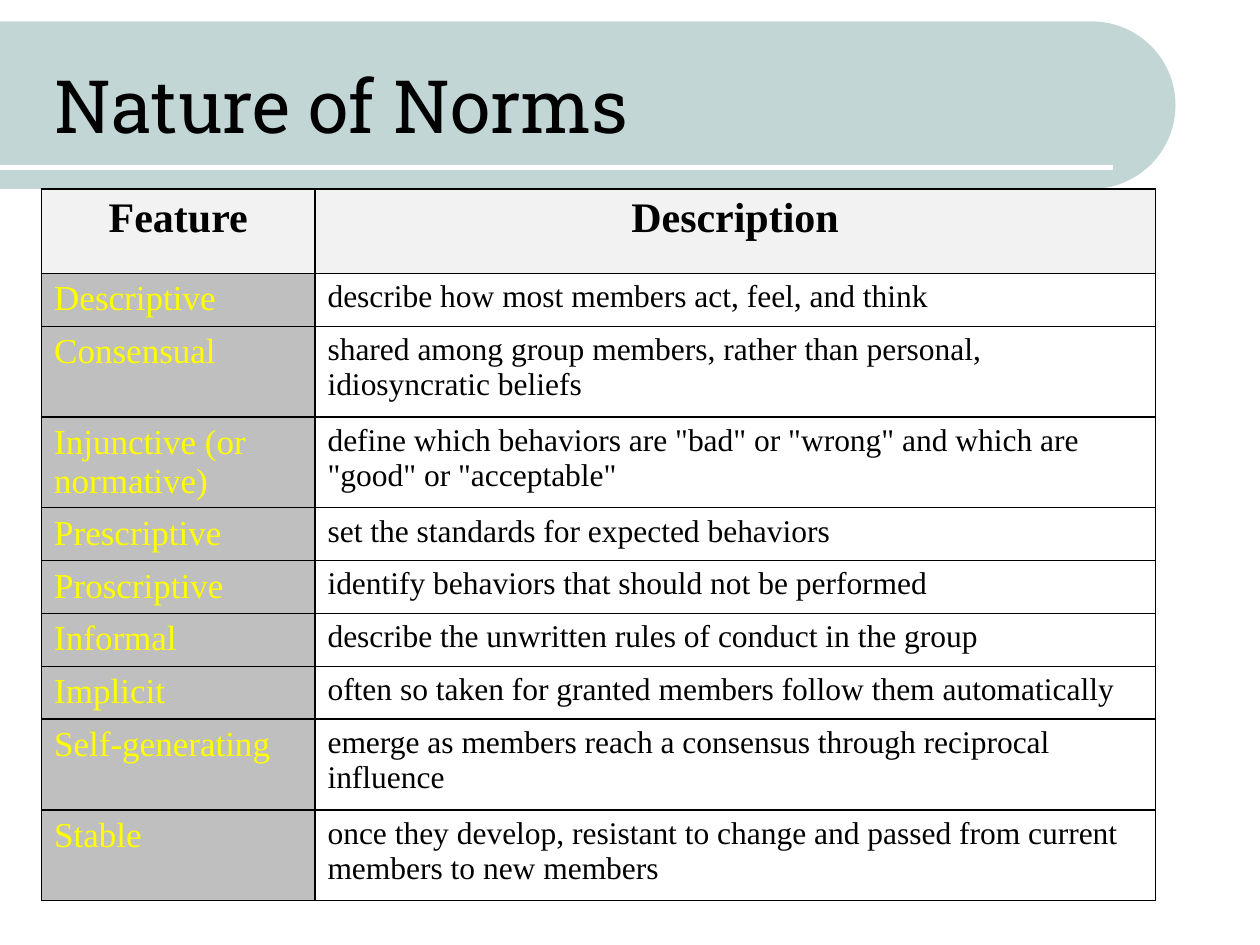
from math import cos, pi, sin

from lxml.etree import SubElement
from pptx import Presentation
from pptx.dml.color import RGBColor
from pptx.enum.shapes import MSO_CONNECTOR
from pptx.enum.text import MSO_ANCHOR, MSO_AUTO_SIZE, PP_ALIGN
from pptx.oxml.ns import qn
from pptx.util import Inches, Pt

BLACK = RGBColor(0x00, 0x00, 0x00)
WHITE = RGBColor(0xFF, 0xFF, 0xFF)
YELLOW = RGBColor(0xFF, 0xFF, 0x00)
SAGE = RGBColor(0xC2, 0xD6, 0xD6)
PALE_GREY = RGBColor(0xF2, 0xF2, 0xF2)
MID_GREY = RGBColor(0xBF, 0xBF, 0xBF)

HEADER = {"size": Pt(24), "bold": True, "color": BLACK}
FEATURE = {"size": Pt(20), "bold": False, "color": YELLOW}
DESCRIPTION = {"size": Pt(18), "bold": False, "color": BLACK}

COLUMN_WIDTHS = [2.17, 6.67]
HEADER_HEIGHT, SINGLE_HEIGHT, DOUBLE_HEIGHT = 0.67, 0.42, 0.72
NORMS = [
    ("Descriptive", "describe how most members act, feel, and think", SINGLE_HEIGHT),
    ("Consensual", "shared among group members, rather than personal, idiosyncratic beliefs", DOUBLE_HEIGHT),
    ("Injunctive (or normative)",
     'define which behaviors are "bad" or "wrong" and which are "good" or "acceptable"', DOUBLE_HEIGHT),
    ("Prescriptive", "set the standards for expected behaviors", SINGLE_HEIGHT),
    ("Proscriptive", "identify behaviors that should not be performed", SINGLE_HEIGHT),
    ("Informal", "describe the unwritten rules of conduct in the group", SINGLE_HEIGHT),
    ("Implicit", "often so taken for granted members follow them automatically", SINGLE_HEIGHT),
    ("Self-generating", "emerge as members reach a consensus through reciprocal influence", DOUBLE_HEIGHT),
    ("Stable", "once they develop, resistant to change and passed from current members to new members",
     DOUBLE_HEIGHT),
]


class NormsSlide:
    title_font = "Roboto Slab"
    table_font = "Times New Roman"

    def __init__(self, deck):
        self.page = deck.slides.add_slide(deck.slide_layouts[5])

    def format_span(self, span, values):
        for name, value in values.items():
            if name == "color":
                span.font.color.rgb = value
            else:
                setattr(span.font, name, value)

    def add_text(self, frame, text, values, align):
        para = frame.paragraphs[0]
        para.alignment = align
        span = para.add_run()
        span.text = text
        self.format_span(span, values)

    def banner(self, top, bottom, right, color):
        radius = (bottom - top) / 2
        center_x, center_y = right - radius, top + radius
        steps = 48
        angles = [pi * step / steps - pi / 2 for step in range(steps + 1)]
        points = [(Inches(center_x + radius * cos(angle)), Inches(center_y + radius * sin(angle)))
                  for angle in angles]
        builder = self.page.shapes.build_freeform(0, Inches(top))
        builder.add_line_segments(points + [(0, Inches(bottom))], close=True)
        shape = builder.convert_to_shape()
        shape.shadow.inherit = False
        shape.fill.solid()
        shape.fill.fore_color.rgb = color
        shape.line.fill.background()

    def rule(self, top, right, color, width):
        line = self.page.shapes.add_connector(
            MSO_CONNECTOR.STRAIGHT, 0, Inches(top), Inches(right), Inches(top))
        line.line.color.rgb = color
        line.line.width = Pt(width)
        SubElement(line.element.spPr, qn("a:effectLst"))

    def title(self, text, left, top, width, height):
        box = self.page.shapes.title
        box.left, box.top, box.width, box.height = map(Inches, (left, top, width, height))
        frame = box.text_frame
        settings = {"word_wrap": True, "auto_size": MSO_AUTO_SIZE.NONE, "vertical_anchor": MSO_ANCHOR.MIDDLE}
        for name, value in settings.items():
            setattr(frame, name, value)
        self.add_text(frame, text, {"name": self.title_font, "size": Pt(42), "color": BLACK}, PP_ALIGN.LEFT)
        box.element.getparent().append(box.element)

    def cell(self, cell, text, values, fill=None, align=PP_ALIGN.LEFT):
        self.border(cell)
        if fill is None:
            cell.fill.background()
        else:
            cell.fill.solid()
            cell.fill.fore_color.rgb = fill
        self.add_text(cell.text_frame, text, {"name": self.table_font, **values}, align)

    def border(self, cell):
        properties = cell._tc.get_or_add_tcPr()
        for side in ("lnL", "lnR", "lnT", "lnB"):
            line = SubElement(properties, qn(f"a:{side}"), w=str(Pt(1)))
            fill = SubElement(line, qn("a:solidFill"))
            SubElement(fill, qn("a:srgbClr"), val=str(BLACK))

    def table(self, left, top, headings, norms):
        heights = [HEADER_HEIGHT] + [height for _, _, height in norms]
        frame = self.page.shapes.add_table(
            len(heights), len(headings), Inches(left), Inches(top),
            Inches(sum(COLUMN_WIDTHS)), Inches(sum(heights)))
        table = frame.table
        table.first_row = table.horz_banding = False
        for column, width in zip(table.columns, COLUMN_WIDTHS):
            column.width = Inches(width)
        for row, height in zip(table.rows, heights):
            row.height = Inches(height)
        for index, heading in enumerate(headings):
            self.cell(table.cell(0, index), heading, HEADER, PALE_GREY, PP_ALIGN.CENTER)
        for index, (feature, description, _) in enumerate(norms, start=1):
            self.cell(table.cell(index, 0), feature, FEATURE, MID_GREY)
            self.cell(table.cell(index, 1), description, DESCRIPTION)


def main():
    deck = Presentation()
    deck.slide_width, deck.slide_height = Inches(10), Inches(7.5)
    slide = NormsSlide(deck)
    slide.banner(0.17, 1.5, 9.33, SAGE)
    slide.rule(1.33, 8.83, WHITE, 3)
    slide.table(0.33, 1.5, ["Feature", "Description"], NORMS)
    slide.title("Nature of Norms", 0.33, 0.33, 8.77, 1)
    deck.save("out.pptx")


if __name__ == "__main__":
    main()
